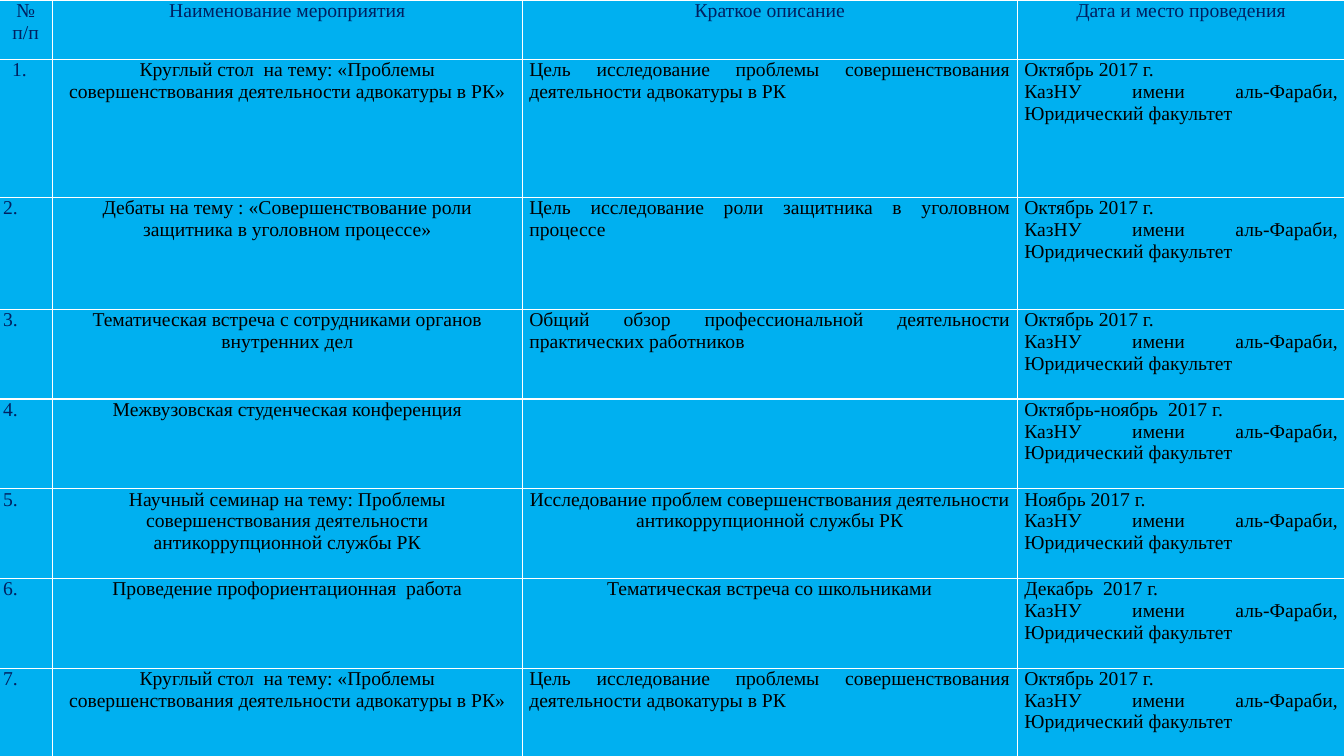
from dataclasses import dataclass

from lxml.etree import SubElement
from pptx import Presentation
from pptx.dml.color import RGBColor
from pptx.enum.text import PP_ALIGN
from pptx.oxml.ns import qn
from pptx.table import _Cell
from pptx.util import Inches, Pt

NAVY, BLACK, WHITE, SKY = "002060", "000000", "FFFFFF", "00B0F0"
LEFT, CENTER, JUSTIFY = PP_ALIGN.LEFT, PP_ALIGN.CENTER, PP_ALIGN.JUSTIFY
COLUMN_WIDTHS = [0.53, 4.66, 4.91, 3.25]
ROW_HEIGHTS = [0.59, 1.37, 1.11] + [0.89] * 5
VENUE = "КазНУ имени аль-Фараби, Юридический факультет"
HEADINGS = ["№\nп/п", "Наименование мероприятия", "Краткое описание", "Дата и место проведения"]


@dataclass(frozen=True)
class Event:
    title: str
    summary: str
    date: str = "Октябрь 2017 г."
    summary_align: PP_ALIGN = JUSTIFY


@dataclass(frozen=True)
class Entry:
    text: str
    align: PP_ALIGN
    color: str = BLACK
    left: float = 0.07
    right: float = 0.07


ADVOCACY = Event(
    "Круглый стол  на тему: «Проблемы совершенствования деятельности адвокатуры в РК»",
    "Цель исследование проблемы совершенствования деятельности адвокатуры в РК",
)
EVENTS = [
    ADVOCACY,
    Event(
        "Дебаты на тему : «Совершенствование роли защитника в уголовном процессе»",
        "Цель исследование роли защитника в уголовном процессе",
    ),
    Event(
        "Тематическая встреча с сотрудниками органов внутренних дел",
        "Общий обзор профессиональной деятельности практических работников",
    ),
    Event("Межвузовская студенческая конференция", "", "Октябрь-ноябрь  2017 г."),
    Event(
        "Научный семинар на тему: Проблемы совершенствования деятельности антикоррупционной службы РК",
        "Исследование проблем совершенствования деятельности антикоррупционной службы РК",
        "Ноябрь 2017 г.",
        CENTER,
    ),
    Event(
        "Проведение профориентационная  работа",
        "Тематическая встреча со школьниками",
        "Декабрь  2017 г.",
        CENTER,
    ),
    ADVOCACY,
]


def rgb(color: str) -> RGBColor:
    return RGBColor.from_string(color)


def heading_entries() -> list[Entry]:
    return [Entry(heading, CENTER, NAVY, 0.04, 0.04) for heading in HEADINGS]


def event_entries(number: int, event: Event) -> list[Entry]:
    number_left = 0.13 if number == 1 else 0.04
    return [
        Entry(f"{number}.", LEFT, NAVY, number_left, 0.04),
        Entry(event.title, CENTER),
        Entry(event.summary, event.summary_align),
        Entry(f"{event.date}\n{VENUE}", JUSTIFY),
    ]


def draw_borders(cell: _Cell) -> None:
    properties = cell._tc.get_or_add_tcPr()
    for side in ("a:lnL", "a:lnR", "a:lnT", "a:lnB"):
        border = SubElement(properties, qn(side), w=str(Pt(1)))
        SubElement(SubElement(border, qn("a:solidFill")), qn("a:srgbClr"), val=WHITE)


def draw_entry(cell: _Cell, entry: Entry) -> None:
    draw_borders(cell)
    cell.fill.solid()
    cell.fill.fore_color.rgb = rgb(SKY)
    margins = {
        "margin_left": Inches(entry.left),
        "margin_right": Inches(entry.right),
        "margin_top": Inches(0),
        "margin_bottom": Inches(0),
    }
    for name, value in margins.items():
        setattr(cell, name, value)
    cell.text = entry.text
    for paragraph in cell.text_frame.paragraphs:
        paragraph.alignment = entry.align
        for name, value in {"name": "Times New Roman", "size": Pt(14)}.items():
            setattr(paragraph.font, name, value)
            for run in paragraph.runs:
                setattr(run.font, name, value)
                run.font.color.rgb = rgb(entry.color)


def main() -> None:
    presentation = Presentation()
    presentation.slide_width, presentation.slide_height = Inches(13.33), Inches(7.5)
    slide = presentation.slides.add_slide(presentation.slide_layouts[6])
    schedule = slide.shapes.add_table(
        len(ROW_HEIGHTS), len(COLUMN_WIDTHS), Inches(-0.01), Inches(0), Inches(13.35), Inches(7.5)
    ).table
    schedule.first_row = schedule.horz_banding = False
    for column, width in zip(schedule.columns, COLUMN_WIDTHS):
        column.width = Inches(width)
    for row, height in zip(schedule.rows, ROW_HEIGHTS):
        row.height = Inches(height)
    entries = [heading_entries()]
    entries += [event_entries(number, event) for number, event in enumerate(EVENTS, 1)]
    for row, row_entries in zip(schedule.rows, entries):
        for cell, entry in zip(row.cells, row_entries):
            draw_entry(cell, entry)
    presentation.save("out.pptx")


if __name__ == "__main__":
    main()
